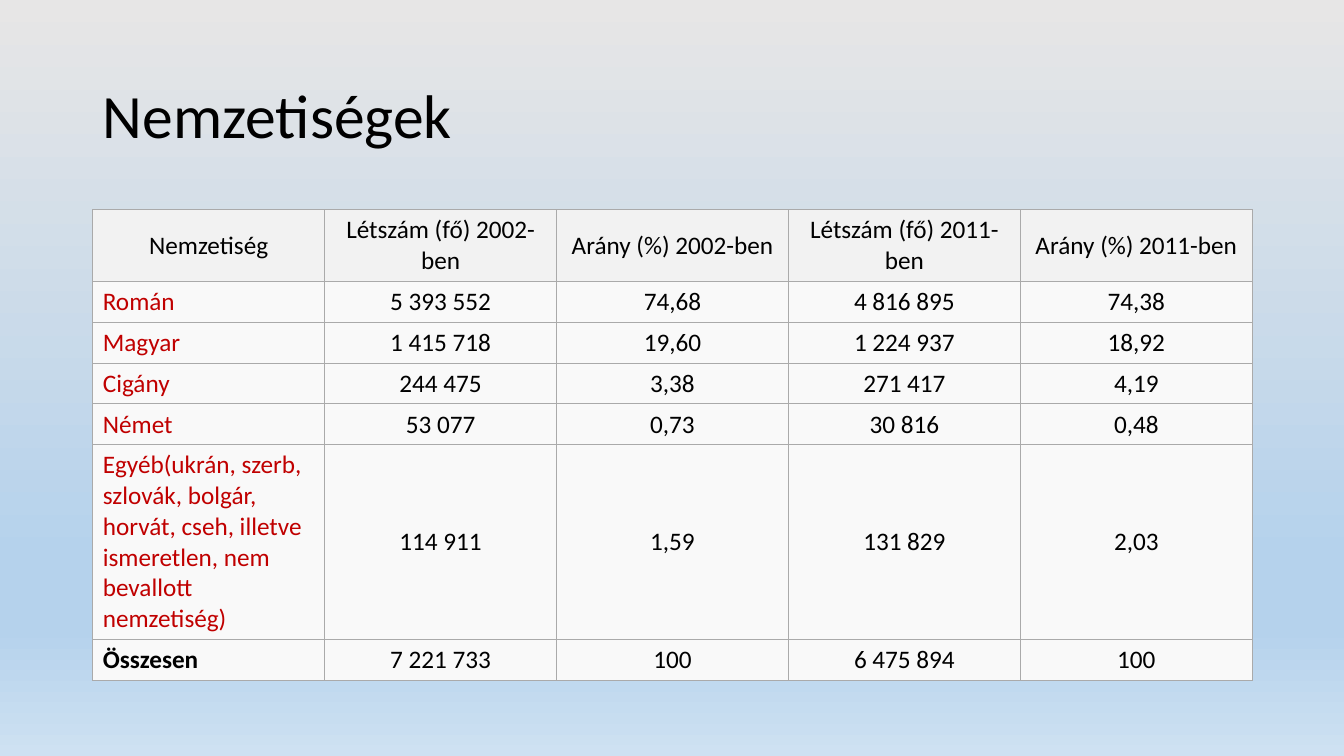
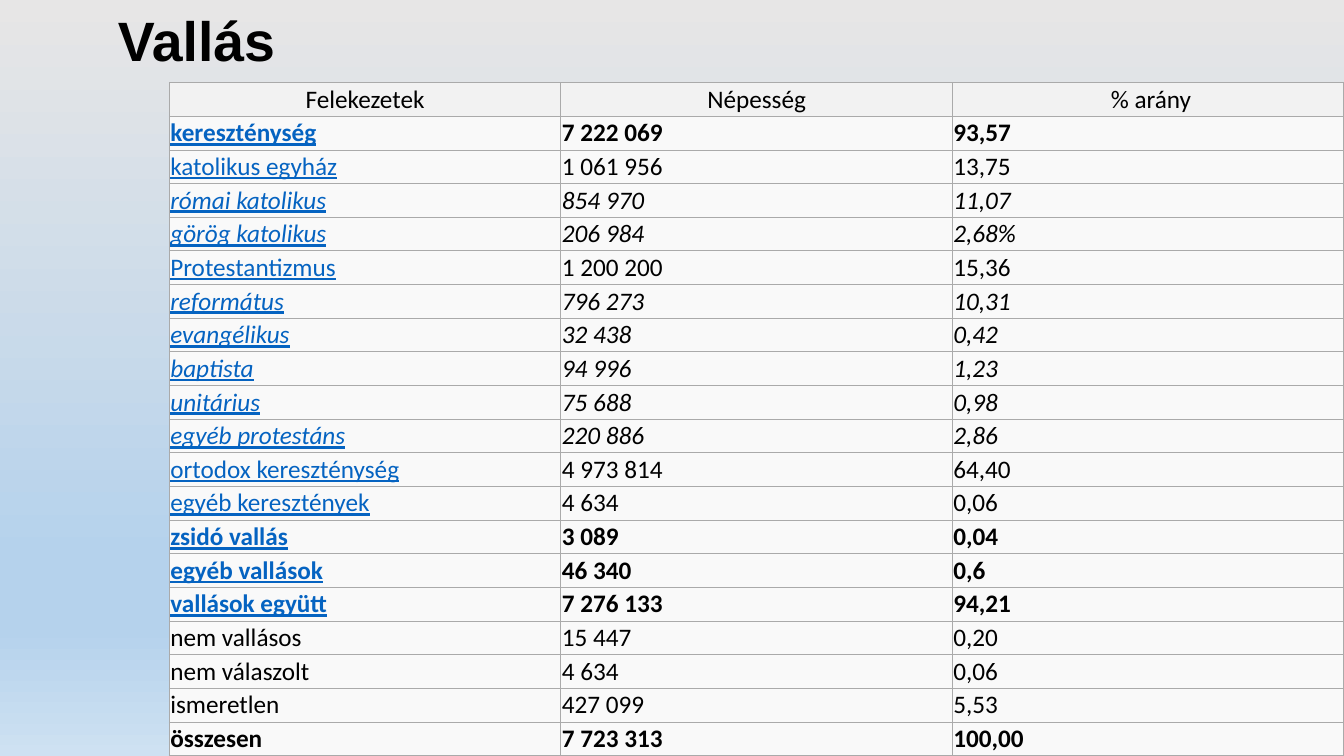
from dataclasses import dataclass
from typing import Optional

from lxml.etree import SubElement
from pptx import Presentation
from pptx.dml.color import RGBColor
from pptx.enum.text import MSO_ANCHOR as Anchor, MSO_AUTO_SIZE as AutoSize, PP_ALIGN as Align
from pptx.oxml.ns import qn
from pptx.util import Inches, Pt

COLORS = {
    "text": "000000",
    "nationality": "C00000",
    "religion": "0563C1",
    "border": "AAAAAA",
    "header": "F2F2F2",
    "body": "F9F9F9",
}
BACKGROUND_STOPS = [(0, "E7E6E6"), (74, "B5D2EC"), (83, "B5D2EC"), (100, "CEE1F2")]
TITLE_ONLY_LAYOUT = 5
SLIDE_WIDTH, SLIDE_HEIGHT = 13.33, 7.5


@dataclass
class Box:
    left: float
    top: float
    width: float
    height: float


@dataclass
class TextStyle:
    size: float = 18
    font: str = "Calibri"
    color: str = "text"
    bold: bool = False
    italic: bool = False
    underline: bool = False


@dataclass
class Row:
    cells: list[str]
    label_color: str = "text"
    bold_label: bool = False
    bold: bool = False
    italic: bool = False
    underline_label: bool = False


@dataclass
class TableDesign:
    left: float
    top: float
    width: float
    row_heights: list[float]
    value_align: Align
    margin: Optional[float] = None


# Slide contents
NATIONALITY_ROWS = [
    Row(["Nemzetiség", "Létszám (fő) 2002-ben", "Arány (%) 2002-ben",
         "Létszám (fő) 2011-ben", "Arány (%) 2011-ben"]),
    Row(["Román", "5 393 552", "74,68", "4 816 895", "74,38"], "nationality"),
    Row(["Magyar", "1 415 718", "19,60", "1 224 937", "18,92"], "nationality"),
    Row(["Cigány", "244 475", "3,38", "271 417", "4,19"], "nationality"),
    Row(["Német", "53 077", "0,73", "30 816", "0,48"], "nationality"),
    Row(["Egyéb(ukrán, szerb, szlovák, bolgár, horvát, cseh, illetve ismeretlen, "
         "nem bevallott nemzetiség)", "114 911", "1,59", "131 829", "2,03"], "nationality"),
    Row(["Összesen", "7 221 733", "100", "6 475 894", "100"], bold_label=True),
]


def religion(name: str, people: str, share: str, bold: bool = False, italic: bool = False) -> Row:
    """Describe a denomination, whose name is blue and underlined."""
    return Row([name, people, share], "religion", bold, bold, italic, underline_label=True)


RELIGION_ROWS = [
    Row(["Felekezetek", "Népesség", " % arány"]),
    religion("kereszténység", "7 222 069", "93,57", bold=True),
    religion("katolikus egyház", "1 061 956", "13,75"),
    religion("római katolikus", "854 970", "11,07", italic=True),
    religion("görög katolikus", "206 984", "2,68%", italic=True),
    religion("Protestantizmus", "1 200 200", "15,36"),
    religion("református", "796 273", "10,31", italic=True),
    religion("evangélikus", "32 438", "0,42", italic=True),
    religion("baptista", "94 996", "1,23", italic=True),
    religion("unitárius", "75 688", "0,98", italic=True),
    religion("egyéb protestáns", "220 886", "2,86", italic=True),
    religion("ortodox kereszténység", "4 973 814", "64,40"),
    religion("egyéb keresztények", "4 634", "0,06"),
    religion("zsidó vallás", "3 089", "0,04", bold=True),
    religion("egyéb vallások", "46 340", "0,6", bold=True),
    religion("vallások együtt", "7 276 133", "94,21", bold=True),
    Row(["nem vallásos", "15 447", "0,20"]),
    Row(["nem válaszolt", "4 634", "0,06"]),
    Row(["ismeretlen", "427 099", "5,53"]),
    Row(["összesen", "7 723 313", "100,00"], bold_label=True, bold=True),
]


# Shared drawing
def set_background(master) -> None:
    """Give every slide the same vertical gradient."""
    fill = master.background.fill
    fill.gradient()
    fill.gradient_angle = 270
    stops = master.element.find(".//" + qn("a:gsLst"))
    for old_stop in list(stops):
        stops.remove(old_stop)
    for percent, color in BACKGROUND_STOPS:
        stop = SubElement(stops, qn("a:gs"), pos=str(percent * 1000))
        SubElement(stop, qn("a:srgbClr"), val=color)


def add_run(paragraph, text: str, style: TextStyle) -> None:
    run = paragraph.add_run()
    run.text = text
    font = run.font
    font.name, font.size = style.font, Pt(style.size)
    font.bold, font.italic, font.underline = style.bold, style.italic, style.underline
    font.color.rgb = RGBColor.from_string(COLORS[style.color])


def add_titled_slide(presentation, title: str, box: Box, style: TextStyle,
                     line_spacing: float = 1.0):
    slide = presentation.slides.add_slide(presentation.slide_layouts[TITLE_ONLY_LAYOUT])
    shape = slide.shapes.title
    shape.left, shape.top = Inches(box.left), Inches(box.top)
    shape.width, shape.height = Inches(box.width), Inches(box.height)
    frame = shape.text_frame
    frame.auto_size = AutoSize.NONE
    frame.vertical_anchor = Anchor.MIDDLE
    paragraph = frame.paragraphs[0]
    paragraph.alignment = Align.LEFT
    paragraph.line_spacing = line_spacing
    add_run(paragraph, title, style)
    return slide


def set_borders(cell) -> None:
    properties = cell._tc.get_or_add_tcPr()
    for side in ("lnL", "lnR", "lnT", "lnB"):
        line = SubElement(properties, qn(f"a:{side}"), w=str(Pt(0.75)))
        fill = SubElement(line, qn("a:solidFill"))
        SubElement(fill, qn("a:srgbClr"), val=COLORS["border"])


def fill_cell(cell, text: str, style: TextStyle, align: Align, background: str,
              margin: Optional[float]) -> None:
    set_borders(cell)
    cell.fill.solid()
    cell.fill.fore_color.rgb = RGBColor.from_string(COLORS[background])
    cell.vertical_anchor = Anchor.MIDDLE
    if margin is not None:
        cell.margin_left = cell.margin_right = Inches(margin)
        cell.margin_top = cell.margin_bottom = Inches(margin)
    paragraph = cell.text_frame.paragraphs[0]
    paragraph.alignment = align
    add_run(paragraph, text, style)


def add_data_table(slide, rows: list[Row], design: TableDesign) -> None:
    column_count = len(rows[0].cells)
    table = slide.shapes.add_table(
        len(rows), column_count, Inches(design.left), Inches(design.top),
        Inches(design.width), Inches(sum(design.row_heights))).table
    table.first_row = table.horz_banding = False
    for column in table.columns:
        column.width = Inches(design.width / column_count)
    for row_index, (row, height) in enumerate(zip(rows, design.row_heights)):
        table.rows[row_index].height = Inches(height)
        is_header = row_index == 0
        label_style = TextStyle(color=row.label_color, bold=row.bold_label,
                                italic=row.italic, underline=row.underline_label)
        value_style = TextStyle(bold=row.bold, italic=row.italic)
        for column_index, text in enumerate(row.cells):
            is_label = column_index == 0
            if is_header:
                align = Align.CENTER
            else:
                align = Align.LEFT if is_label else design.value_align
            fill_cell(table.cell(row_index, column_index), text,
                      label_style if is_label else value_style, align,
                      "header" if is_header else "body", design.margin)


# Slides
def add_nationalities(presentation) -> None:
    slide = add_titled_slide(presentation, "Nemzetiségek", Box(0.92, 0.4, 11.5, 1.45),
                             TextStyle(size=44))
    heights = [0.7] + [0.4] * 4 + [1.93, 0.4]
    add_data_table(slide, NATIONALITY_ROWS,
                   TableDesign(0.92, 2.08, 11.5, heights, Align.CENTER))


def add_religions(presentation) -> None:
    slide = add_titled_slide(presentation, "Vallás", Box(1.07, 0.1, 11.35, 0.67),
                             TextStyle(size=39.6, font="Arial", bold=True), 0.9)
    top = 0.82
    row_count = len(RELIGION_ROWS)
    heights = [(SLIDE_HEIGHT - top) / row_count] * row_count
    add_data_table(slide, RELIGION_ROWS,
                   TableDesign(1.68, top, 11.65, heights, Align.LEFT, margin=0.01))


def main() -> None:
    presentation = Presentation()
    presentation.slide_width = Inches(SLIDE_WIDTH)
    presentation.slide_height = Inches(SLIDE_HEIGHT)
    set_background(presentation.slide_master)
    add_nationalities(presentation)
    add_religions(presentation)
    presentation.save("out.pptx")


if __name__ == "__main__":
    main()
